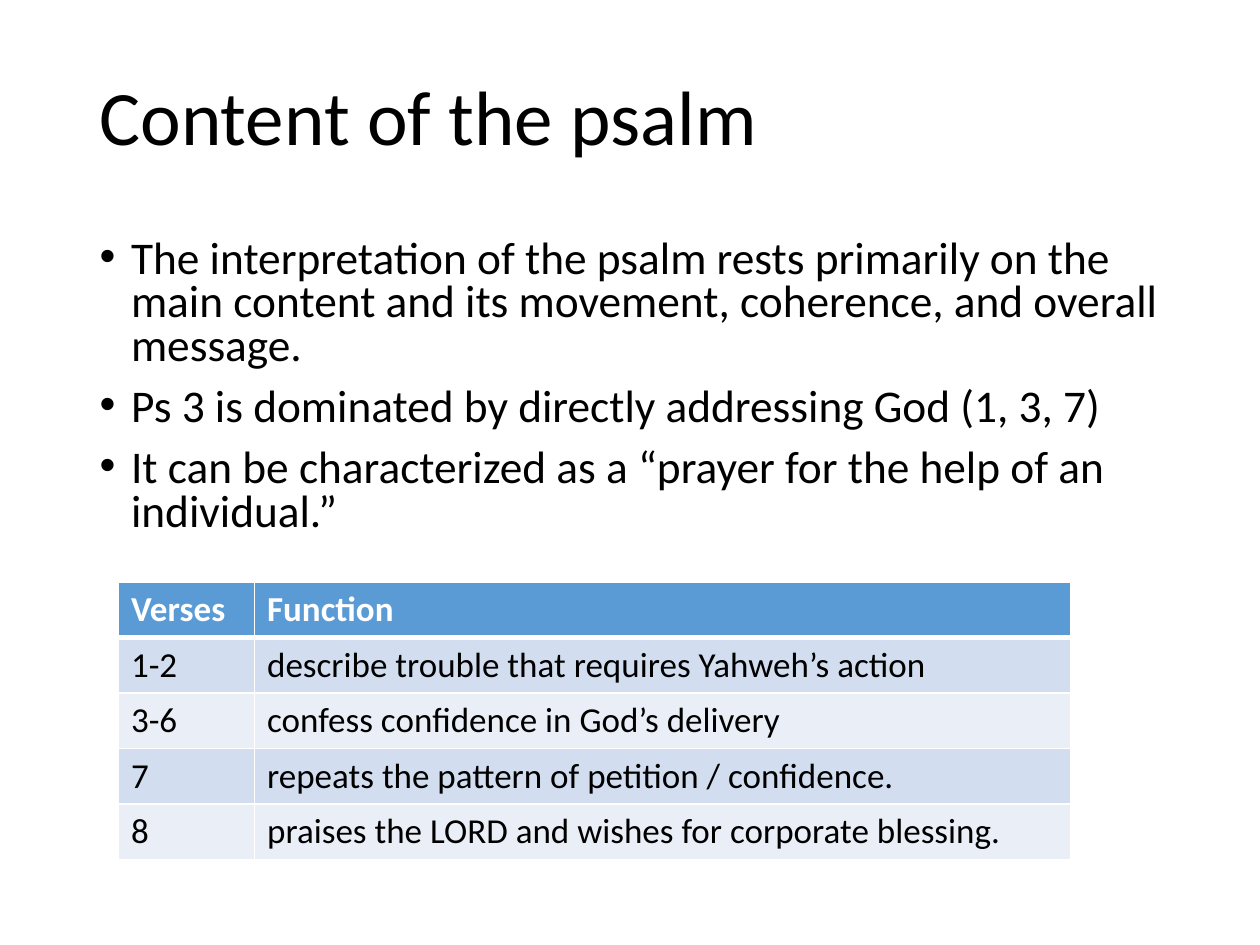
from dataclasses import dataclass
from lxml.etree import SubElement
from pptx import Presentation
from pptx.dml.color import RGBColor
from pptx.enum.text import MSO_ANCHOR, MSO_AUTO_SIZE, PP_ALIGN
from pptx.oxml import parse_xml
from pptx.oxml.ns import nsdecls, qn
from pptx.util import Inches, Pt


@dataclass(frozen=True)
class Theme:
    font: str = "Calibri"
    ink: str = "000000"
    paper: str = "FFFFFF"
    header: str = "5B9BD5"
    bands: tuple = ("D2DEEF", "EAEFF7")
    title: float = 44
    body: float = 25.9
    cell: float = 20


theme = Theme()


def write(p, text, size, color=theme.ink, bold=False, spacing=None, before=0):
    p.alignment = PP_ALIGN.LEFT
    p.line_spacing = spacing
    p.space_before = Pt(before)
    r = p.add_run()
    r.text = text
    r.font.name = theme.font
    r.font.size = Pt(size)
    r.font.bold = bold
    r.font.color.rgb = RGBColor.from_string(color)


prs = Presentation()
prs.slide_width, prs.slide_height = Inches(10), Inches(7.5)
slide = prs.slides.add_slide(prs.slide_layouts[1])
slide.background.fill.solid()
slide.background.fill.fore_color.rgb = RGBColor.from_string(theme.paper)

margin = Inches(0.69)
width = prs.slide_width - 2 * margin
title, body = slide.placeholders
for sp, top, height, anchor in (
    (title, 0.23, 1.45, MSO_ANCHOR.MIDDLE),
    (body, 1.85, 2.62, MSO_ANCHOR.TOP),
):
    sp.left, sp.top, sp.width, sp.height = margin, Inches(top), width, Inches(height)
    tf = sp.text_frame
    tf.word_wrap = True
    tf.auto_size = MSO_AUTO_SIZE.NONE
    tf.vertical_anchor = anchor

write(title.text_frame.paragraphs[0], "Content of the psalm", theme.title, spacing=0.9)

points = (
    "The interpretation of the psalm rests primarily on the main content "
    "and its movement, coherence, and overall message.",
    "Ps 3 is dominated by directly addressing God (1, 3, 7)",
    "It can be characterized as a “prayer for the help of an individual.”",
)
tf = body.text_frame
for i, text in enumerate(points):
    p = tf.add_paragraph() if i else tf.paragraphs[0]
    write(p, text, theme.body, spacing=0.8, before=10)
    pPr = p._p.get_or_add_pPr()
    pPr.set("marL", str(Inches(0.25)))
    pPr.set("indent", str(-Inches(0.25)))
    SubElement(pPr, qn("a:buFont"), typeface="Arial")
    SubElement(pPr, qn("a:buChar"), char="•")

rows = (
    ("Verses", "Function"),
    ("1-2", "describe trouble that requires Yahweh’s action"),
    ("3-6", "confess confidence in God’s delivery"),
    ("7", "repeats the pattern of petition / confidence."),
    ("8", "praises the LORD and wishes for corporate blessing."),
)
cols = (Inches(1.08), Inches(6.48))
row_height = Inches(0.41)
table = slide.shapes.add_table(
    len(rows), len(cols), Inches(0.94), Inches(4.62), sum(cols), row_height * len(rows)
).table
for col, col_width in zip(table.columns, cols):
    col.width = col_width

for i, row in enumerate(rows):
    head = i == 0
    fill = theme.header if head else theme.bands[(i - 1) % 2]
    weights = {"L": 1, "R": 1, "T": 3 if i == 1 else 1, "B": 3 if head else 1}
    for j, text in enumerate(row):
        cell = table.cell(i, j)
        cell.fill.solid()
        cell.fill.fore_color.rgb = RGBColor.from_string(fill)
        color = theme.paper if head else theme.ink
        write(cell.text_frame.paragraphs[0], text, theme.cell, color, bold=head)
        tcPr = cell._tc.get_or_add_tcPr()
        for n, (side, weight) in enumerate(weights.items()):
            tcPr.insert(n, parse_xml(
                f'<a:ln{side} {nsdecls("a")} w="{Pt(weight)}"><a:solidFill>'
                f'<a:srgbClr val="{theme.paper}"/></a:solidFill></a:ln{side}>'
            ))

prs.save("out.pptx")
